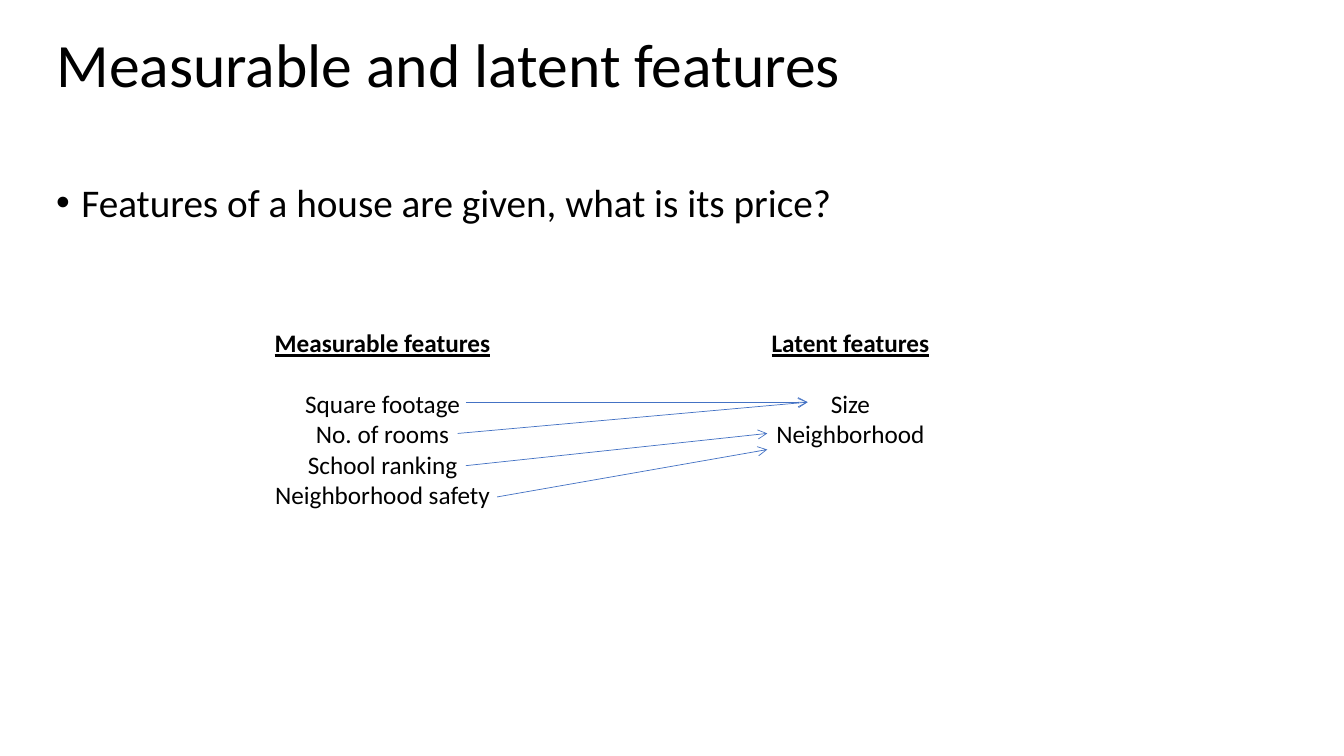
from pptx import Presentation
from pptx.dml.color import RGBColor as RGB
from pptx.enum.shapes import MSO_CONNECTOR as Link
from pptx.enum.text import MSO_ANCHOR as Anchor, MSO_AUTO_SIZE as Fit, PP_ALIGN as Align
from pptx.oxml.ns import qn
from pptx.util import Inches, Pt
from lxml.etree import SubElement as Sub


def color(code):
    return RGB.from_string(code)


def write(para, text, size=18, bold=False, line=False, align=Align.LEFT,
          before=0, lead=1.0, bullet=None):
    para.alignment = align
    para.line_spacing = lead
    para.space_before = Pt(before)
    if bullet:
        props = para._p.get_or_add_pPr()
        props.set("marL", str(Inches(0.25)))
        props.set("indent", str(-Inches(0.25)))
        Sub(props, qn("a:buFont")).set("typeface", "Arial")
        Sub(props, qn("a:buChar")).set("char", bullet)
    run = para.add_run()
    run.text = text
    font = run.font
    font.name, font.size = Deck.face, Pt(size)
    font.bold, font.underline = bold, line
    font.color.rgb = color(Deck.ink)


class Deck:
    """Holds the style and the current slide, and adds each kind of element."""
    face = "Calibri"
    ink = "000000"
    blue = "4472C4"

    def __init__(self, show):
        self.slide = show.slides.add_slide(show.slide_layouts[5])

    def title(self, text, left, top, width, height):
        head = self.slide.shapes.title
        head.left, head.top = Inches(left), Inches(top)
        head.width, head.height = Inches(width), Inches(height)
        frame = head.text_frame
        frame.auto_size = Fit.NONE
        frame.vertical_anchor = Anchor.MIDDLE
        write(frame.paragraphs[0], text, size=44, lead=0.9)

    def box(self, left, top, width, height):
        shape = self.slide.shapes.add_textbox(
            Inches(left), Inches(top), Inches(width), Inches(height))
        shape.text_frame.word_wrap = True
        return shape.text_frame

    def body(self, text, *area):
        frame = self.box(*area)
        write(frame.paragraphs[0], text, size=28, lead=0.9, bullet="•")

    def group(self, head, items, *area):
        frame = self.box(*area)
        write(frame.paragraphs[0], head, bold=True, line=True, align=Align.CENTER)
        for rank, item in enumerate(items):
            write(frame.add_paragraph(), item, align=Align.CENTER,
                  before=0 if rank else 22)

    def arrow(self, start, end):
        ends = [Inches(n) for n in (*start, *end)]
        link = self.slide.shapes.add_connector(Link.STRAIGHT, *ends)
        link.line.color.rgb = color(self.blue)
        link.line.width = Pt(0.5)
        Sub(link.line._get_or_add_ln(), qn("a:tailEnd")).set("type", "arrow")
        Sub(link._element.spPr, qn("a:effectLst"))


def main():
    show = Presentation()
    show.slide_width, show.slide_height = Inches(13.33), Inches(7.5)
    deck = Deck(show)
    deck.title("Measurable and latent features", 0.46, 0.15, 10.23, 1.04)
    deck.body("Features of a house are given, what is its price?",
              0.46, 1.77, 12.33, 4.99)
    deck.group("Measurable features",
               ["Square footage", "No. of rooms", "School ranking",
                "Neighborhood safety"], 2.26, 3.2, 3.07, 1.92)
    deck.group("Latent features", ["Size", "Neighborhood"], 6.9, 3.2, 3.07, 1.31)
    size, place, safety = (8.01, 3.99), (7.61, 4.3), (7.61, 4.46)
    for start, end in [((4.62, 3.99), size), ((4.54, 4.3), size),
                       ((4.62, 4.62), place), ((4.93, 4.93), safety)]:
        deck.arrow(start, end)
    show.save("out.pptx")


if __name__ == "__main__":
    main()
